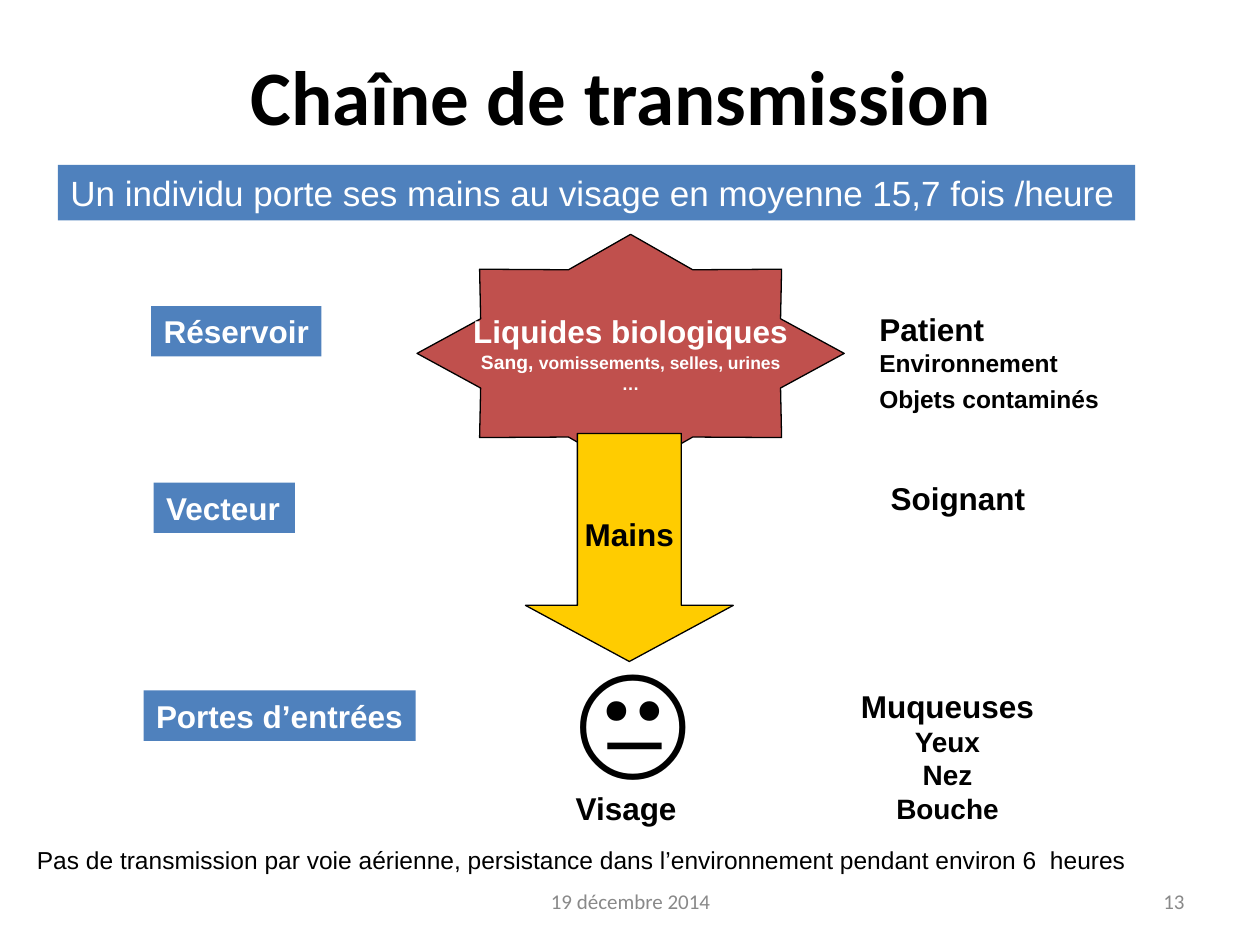
from pptx import Presentation
from pptx.dml.color import RGBColor
from pptx.enum.shapes import MSO_SHAPE
from pptx.enum.text import MSO_ANCHOR, PP_ALIGN
from pptx.util import Inches, Pt

BLUE, RED, GOLD = "4F81BD", "C0504D", "FFCC00"
WHITE, BLACK, GREY = "FFFFFF", "000000", "898989"
LEFT, MID, RIGHT = PP_ALIGN.LEFT, PP_ALIGN.CENTER, PP_ALIGN.RIGHT

# Content: each line is a list of (text, size) runs
TITLE = "Chaîne de transmission "
BANNER = "Un individu porte ses mains au visage en moyenne 15,7 fois /heure"
STAGES = [  # text, left, top, width
    ("Réservoir", 1.2, 2.43, 1.35),
    ("Vecteur", 1.22, 3.83, 1.12),
    ("Portes d’entrées", 1.14, 5.48, 2.16),
]
FLUIDS = [
    [("Liquides biologiques", 18)],
    [("Sang, ", 11), ("vomissements, selles, urines", 10)],
    [("…", 10)],
]
DETAILS = [  # lines, box, alignment, wrap
    ([[("Patient", 18)], [("Environnement", 14)],
      [("Objets contaminés", 14), (" ", 18)]],
     (6.88, 2.41, 2.02, 0.94), LEFT, False),
    ([[("Soignant", 18)]], (6.97, 3.75, 1.27, 0.4), LEFT, False),
    ([[("Muqueuses", 18)], [("Yeux", 16)], [("Nez", 16)], [("Bouche", 16)]],
     (6.34, 5.4, 2.36, 1.2), MID, True),
    ([[("😐", 72)], [("Visage", 18)]], (4.47, 5.01, 1.24, 1.6), LEFT, True),
]
NOTE = (" Pas de transmission par voie aérienne, persistance dans "
        "l’environnement pendant environ 6  heures")
FOOTER = [  # text, box, alignment
    ("19 décembre 2014", (3.42, 6.95, 3.17, 0.4), MID),
    ("13", (7.17, 6.95, 2.33, 0.4), RIGHT),
]


def rgb(code):
    return RGBColor.from_string(code)


def write(shape, lines, color=BLACK, bold=True, align=LEFT, wrap=False,
          anchor=MSO_ANCHOR.TOP, face="Arial"):
    frame = shape.text_frame
    frame.word_wrap = wrap
    frame.vertical_anchor = anchor
    for i, line in enumerate(lines):
        para = frame.add_paragraph() if i else frame.paragraphs[0]
        para.alignment = align
        font = para.font
        font.name, font.bold, font.size = face, bold, Pt(line[0][1])
        font.color.rgb = rgb(color)
        for text, size in line:
            run = para.add_run()
            run.text = text
            if size != line[0][1]:
                run.font.size = Pt(size)


def label(slide, box, lines, **style):
    shape = slide.shapes.add_textbox(*map(Inches, box))
    write(shape, lines, **style)


def block(slide, kind, box, fill, lines, edge=None, adjust=(), **style):
    shape = slide.shapes.add_shape(kind, *map(Inches, box))
    shape.shadow.inherit = False
    shape.fill.solid()
    shape.fill.fore_color.rgb = rgb(fill)
    if edge:
        shape.line.color.rgb = rgb(edge)
        shape.line.width = Pt(0.75)
    else:
        shape.line.fill.background()
    for i, value in enumerate(adjust):
        shape.adjustments[i] = value
    write(shape, lines, **style)


def main():
    deck = Presentation()
    deck.slide_width, deck.slide_height = Inches(10), Inches(7.5)
    slide = deck.slides.add_slide(deck.slide_layouts[5])

    # Title
    title = slide.shapes.title
    title.left, title.top, title.width, title.height = map(
        Inches, (0.5, 0.13, 9, 1.25))
    write(title, [[(TITLE, 44)]], align=MID, wrap=True,
          anchor=MSO_ANCHOR.MIDDLE, face="Calibri")

    # Banner and stage labels
    block(slide, MSO_SHAPE.RECTANGLE, (0.46, 1.31, 8.55, 0.44), BLUE,
          [[(BANNER, 20)]], color=WHITE, bold=False)
    for text, left, top, width in STAGES:
        block(slide, MSO_SHAPE.RECTANGLE, (left, top, width, 0.4), BLUE,
              [[(text, 18)]], color=WHITE)

    # Source star, with the arrow in front of it
    block(slide, MSO_SHAPE.STAR_8_POINT, (3.31, 1.86, 3.39, 1.89), RED,
          FLUIDS, edge=BLACK, adjust=[0.38], color=WHITE, align=MID,
          anchor=MSO_ANCHOR.MIDDLE)
    block(slide, MSO_SHAPE.DOWN_ARROW, (4.17, 3.44, 1.65, 1.81), GOLD,
          [[("Mains", 18)]], edge=BLACK, adjust=[0.5, 0.27], align=MID,
          anchor=MSO_ANCHOR.MIDDLE)

    # Details, note and footer
    for lines, box, align, wrap in DETAILS:
        label(slide, box, lines, align=align, wrap=wrap)
    label(slide, (0.14, 6.66, 9.69, 0.34), [[(NOTE, 14)]], bold=False,
          wrap=True)
    for text, box, align in FOOTER:
        label(slide, box, [[(text, 12)]], color=GREY, bold=False, align=align,
              wrap=True, anchor=MSO_ANCHOR.MIDDLE, face="Calibri")

    deck.save("out.pptx")


if __name__ == "__main__":
    main()
